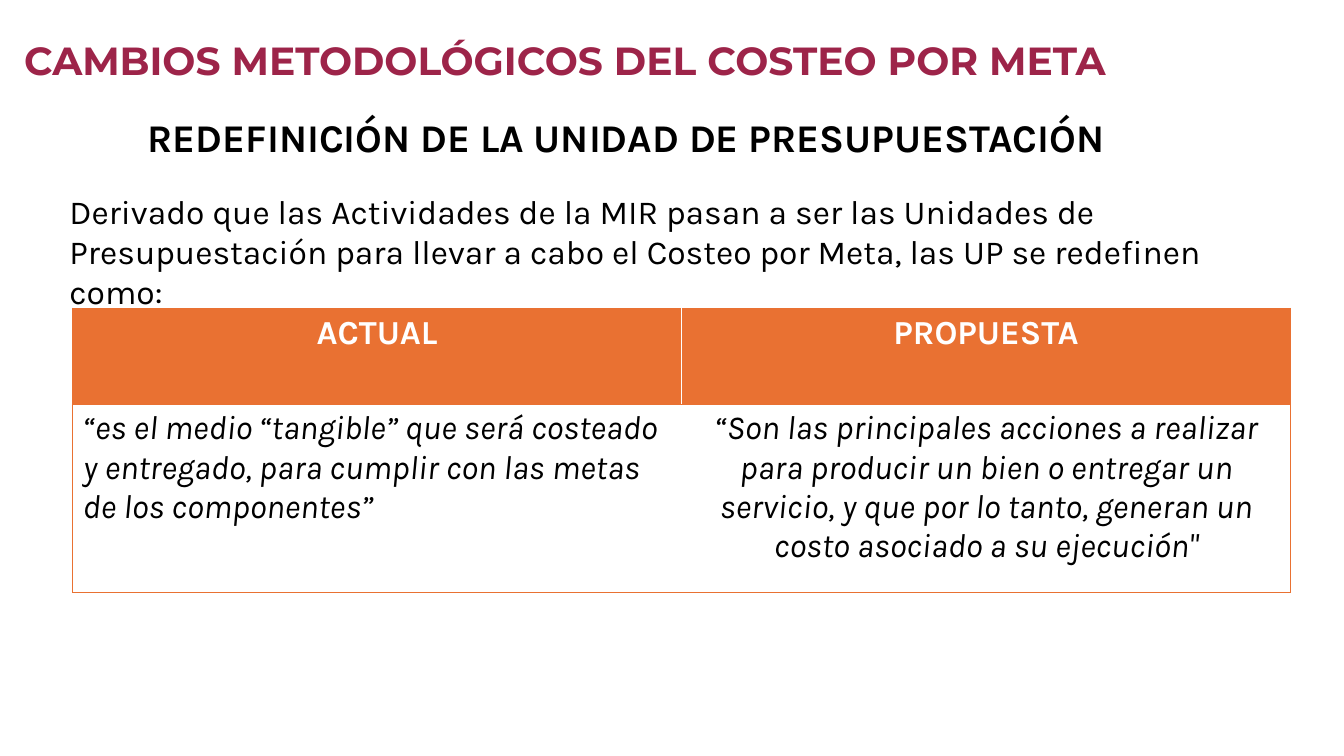
from lxml import etree
from pptx import Presentation
from pptx.dml.color import RGBColor
from pptx.enum import text
from pptx.oxml import ns
from pptx.util import Inches, Pt

WIDE, HIGH = 13.33, 7.5
COLORS = {"wine": "9D2449", "black": "000000", "white": "FFFFFF", "orange": "E97132"}
LEFT, MID = text.PP_ALIGN.LEFT, text.PP_ALIGN.CENTER

HEADS = ["ACTUAL", "PROPUESTA"]
TEXTS = [
    "“es el medio “tangible” que será costeado y entregado, "
    "para cumplir con las metas de los componentes”",
    "“Son las principales acciones a realizar para producir un bien o entregar "
    "un servicio, y que por lo tanto, generan un costo asociado a su ejecución\"",
]


def color(name):
    return RGBColor.from_string(COLORS[name])


def write(frame, words, size, tint, face="Karla", align=LEFT, bold=False, italic=False):
    para = frame.paragraphs[0]
    para.text = words
    para.alignment = align
    font = para.font
    font.name, font.size = face, Pt(size)
    font.bold, font.italic = bold, italic
    font.color.rgb = color(tint)


def label(slide, box, words, size, tint, inset=None, **style):
    frame = slide.shapes.add_textbox(*map(Inches, box)).text_frame
    frame.word_wrap = True
    frame.auto_size = text.MSO_AUTO_SIZE.SHAPE_TO_FIT_TEXT
    if inset is not None:
        frame.margin_left = frame.margin_right = Inches(inset)
        frame.margin_top = frame.margin_bottom = Inches(inset)
    write(frame, words, size, tint, **style)


def edge(cell, sides):
    """Draw 1 pt lines on the given sides, placed ahead of the cell's fill."""
    props = cell._tc.get_or_add_tcPr()
    for spot, side in enumerate(s for s in "LRTB" if s in sides):
        line = etree.Element(ns.qn(f"a:ln{side}"), w=str(Pt(1)))
        fill = etree.SubElement(line, ns.qn("a:solidFill"))
        etree.SubElement(fill, ns.qn("a:srgbClr"), val=COLORS["orange"])
        props.insert(spot, line)


def grid(slide, left, top, width, rows):
    frame = slide.shapes.add_table(2, 2, Inches(left), Inches(top),
                                   Inches(width), Inches(sum(rows)))
    table = frame.table
    table.horz_banding = False
    for row, height in zip(table.rows, rows):
        row.height = Inches(height)
    for col, words in enumerate(zip(HEADS, TEXTS)):
        head, body = table.cell(0, col), table.cell(1, col)
        # Header cell
        head.fill.solid()
        head.fill.fore_color.rgb = color("orange")
        write(head.text_frame, words[0], 24, "white", align=MID, bold=True)
        # Definition cell
        body.fill.background()
        write(body.text_frame, words[1], 24, "black",
              align=MID if col else LEFT, italic=True)
        # Outer frame and the line under the header
        side = "LR"[col]
        edge(head, side + "T")
        edge(body, side + "TB")


def main():
    deck = Presentation()
    deck.slide_width, deck.slide_height = Inches(WIDE), Inches(HIGH)
    slide = deck.slides.add_slide(deck.slide_layouts[6])

    # Title and subtitle
    label(slide, (0.19, 0.31, 12.76, 0.57), "CAMBIOS METODOLÓGICOS DEL COSTEO POR META",
          28, "wine", inset=0.05, face="Montserrat", bold=True)
    label(slide, (1.03, 1.08, 10.36, 0.57), "REDEFINICIÓN DE LA UNIDAD DE PRESUPUESTACIÓN",
          28, "black", align=MID, bold=True)

    # Comparison table, then the lead-in above it
    grid(slide, 0.72, 3.06, 12.08, (0.95, 1.87))
    label(slide, (0.59, 1.84, 12.34, 0.91),
          "Derivado que las Actividades de la MIR pasan a ser las Unidades de "
          "Presupuestación para llevar a cabo el Costeo por Meta, "
          "las UP se redefinen como:", 24, "black")

    deck.save("out.pptx")


if __name__ == "__main__":
    main()
